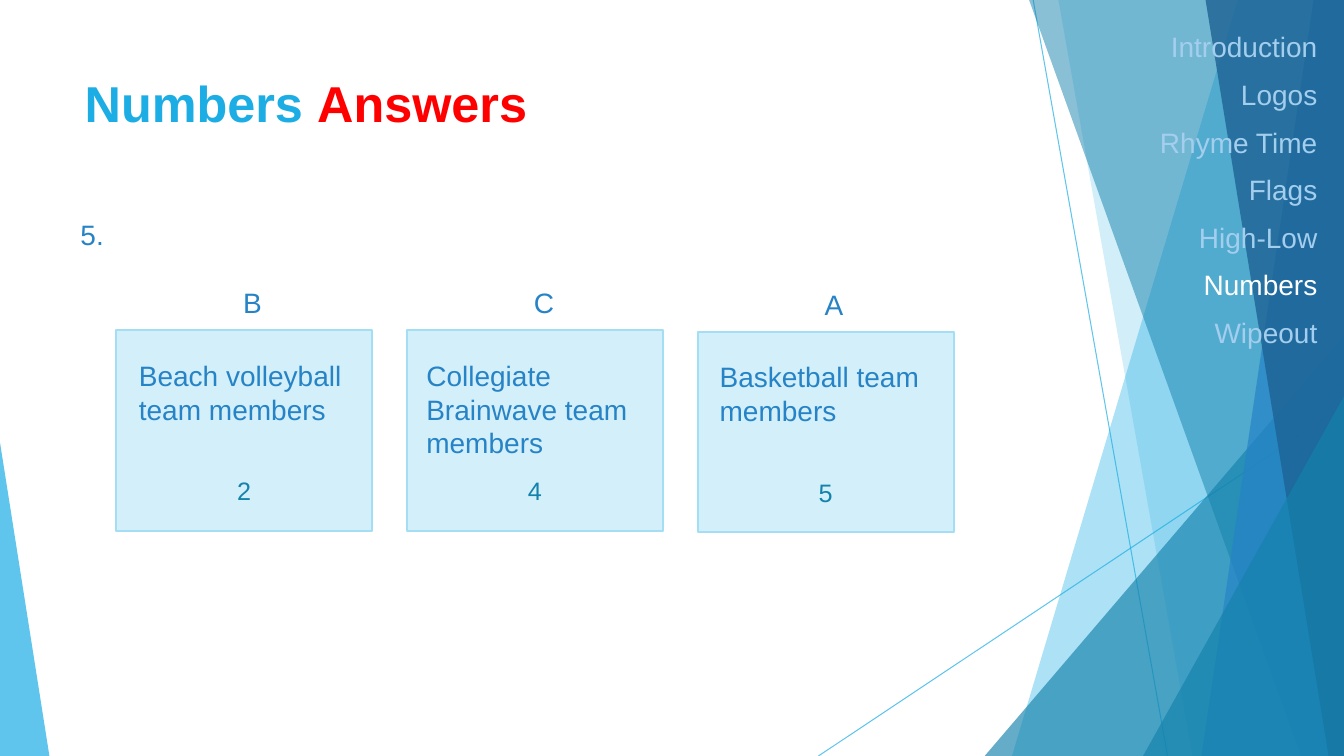
"""Build the "Numbers Answers" quiz slide."""
from pptx import Presentation
from pptx.dml.color import RGBColor
from pptx.enum.shapes import MSO_CONNECTOR, MSO_SHAPE
from pptx.enum.text import MSO_ANCHOR, MSO_AUTO_SIZE, PP_ALIGN
from pptx.oxml.ns import qn
from pptx.util import Pt
from lxml import etree

RECTANGLE, TRIANGLE = MSO_SHAPE.RECTANGLE, MSO_SHAPE.ISOSCELES_TRIANGLE
STRAIGHT = MSO_CONNECTOR.STRAIGHT
LEFT, CENTER, RIGHT = PP_ALIGN.LEFT, PP_ALIGN.CENTER, PP_ALIGN.RIGHT
TOP, BOTTOM = MSO_ANCHOR.TOP, MSO_ANCHOR.BOTTOM
NO_AUTOFIT = MSO_AUTO_SIZE.NONE

SKY = RGBColor(0x1C, 0xAD, 0xE4)
TEAL = RGBColor(0x14, 0x82, 0xAC)
BLUE = RGBColor(0x26, 0x83, 0xC6)
NAVY = RGBColor(0x1D, 0x62, 0x94)
RED = RGBColor(0xFF, 0x00, 0x00)
WHITE = RGBColor(0xFF, 0xFF, 0xFF)
MENU_BLUE = RGBColor(0xA3, 0xCE, 0xED)
CARD_FILL = RGBColor(0xD2, 0xEF, 0xFA)
CARD_LINE = RGBColor(0xA4, 0xDE, 0xF4)

WIDTH, HEIGHT = 960, 540
FONT = "Arial"

TITLE = [("Numbers ", SKY), ("Answers", RED)]
QUESTION = "5."
MENU = ["Introduction", "Logos", "Rhyme Time", "Flags", "High-Low", "Numbers", "Wipeout"]
CURRENT = "Numbers"
# letter, description, answer, top, text inset, text width
CARDS = [
    ("B", "Beach volleyball team members", "2", 236, 9.2, 167),
    ("C", "Collegiate Brainwave team members", "4", 236, 6.8, 173.5),
    ("A", "Basketball team members", "5", 236.9, 8.6, 167),
]
CARD_LEFT, CARD_PITCH, CARD_WIDTH, CARD_HEIGHT = 82.9, 207.7, 183, 143.3

RAYS = [((738, 0), (834, HEIGHT)), ((WIDTH, 290), (584.6, HEIGHT))]
# kind, geometry, colour, opacity
FACETS = [
    ("band", (884.2, 722.9), SKY, 36),
    ("band", (756, 851.8), SKY, 20),
    ("right corner", (703.4, 239.8), TEAL, 66),
    ("band", (735.1, 929.5), TEAL, 50),
    ("band", (938.2, 858.2), BLUE, 70),
    ("band", (861.1, 949), NAVY, 80),
    ("right corner", (816.5, 283), TEAL, 66),
    ("left corner", (35.3, 316.1), SKY, 70),
]


def points(*values):
    return [Pt(value) for value in values]


def set_opacity(shape, percent):
    for color in shape._element.spPr.iter(qn("a:srgbClr")):
        etree.SubElement(color, qn("a:alpha")).set("val", str(percent * 1000))


def write_text(shape, paragraphs, size=20, bold=False, align=LEFT, anchor=TOP, space_before=0):
    frame = shape.text_frame
    frame.word_wrap = True
    frame.auto_size = NO_AUTOFIT
    frame.vertical_anchor = anchor
    for index, runs in enumerate(paragraphs):
        paragraph = frame.paragraphs[0] if index == 0 else frame.add_paragraph()
        paragraph.alignment = align
        paragraph.space_before = Pt(space_before)
        for text, color in runs:
            run = paragraph.add_run()
            run.text = text
            run.font.name = FONT
            run.font.size = Pt(size)
            run.font.bold = bold
            run.font.color.rgb = color


def add_label(slide, box, text, **text_format):
    write_text(slide.shapes.add_textbox(*points(*box)), [[(text, BLUE)]], **text_format)


def add_ray(slide, start, end):
    ray = slide.shapes.add_connector(STRAIGHT, *points(*start, *end))
    ray.line.color.rgb = SKY
    ray.line.width = Pt(0.75)
    set_opacity(ray, 70)
    etree.SubElement(ray._element.spPr, qn("a:effectLst"))


def add_facet(slide, kind, geometry, color, opacity):
    if kind == "band":
        top_x, bottom_x = geometry
        builder = slide.shapes.build_freeform(*points(top_x, 0), scale=1)
        corners = [(WIDTH, 0), (WIDTH, HEIGHT), (bottom_x, HEIGHT)]
        builder.add_line_segments([points(*corner) for corner in corners], close=True)
        facet = builder.convert_to_shape()
    else:
        edge, top = geometry
        on_right = kind == "right corner"
        left, width = (edge, WIDTH - edge) if on_right else (0, edge)
        facet = slide.shapes.add_shape(TRIANGLE, *points(left, top, width, HEIGHT - top))
        facet.adjustments[0] = 1 if on_right else 0
    facet.shadow.inherit = False
    facet.fill.solid()
    facet.fill.fore_color.rgb = color
    facet.line.fill.background()
    set_opacity(facet, opacity)


def add_card(slide, left, letter, description, answer, top, inset, text_width):
    card = slide.shapes.add_shape(RECTANGLE, *points(left, top, CARD_WIDTH, CARD_HEIGHT))
    card.shadow.inherit = False
    card.fill.solid()
    card.fill.fore_color.rgb = CARD_FILL
    card.line.color.rgb = CARD_LINE
    card.line.width = Pt(1.5)
    card.text_frame.margin_bottom = Pt(18)
    write_text(card, [[(answer, TEAL)]], size=18, align=CENTER, anchor=BOTTOM)
    add_label(slide, (left + inset, top + 16.5, text_width, 79), description)
    add_label(slide, (left + 83.7, top - 35.3, 27, 31.5), letter, align=CENTER)


def place(slide, placeholder, box):
    placeholder.left, placeholder.top, placeholder.width, placeholder.height = points(*box)
    slide.shapes._spTree.append(placeholder._element)


def main():
    presentation = Presentation()
    presentation.slide_width, presentation.slide_height = points(WIDTH, HEIGHT)
    slide = presentation.slides.add_slide(presentation.slide_layouts[1])
    title, menu = slide.placeholders

    for start, end in RAYS:
        add_ray(slide, start, end)
    for facet in FACETS:
        add_facet(slide, *facet)

    place(slide, title, (53.3, 48.2, 676.8, 103.7))
    write_text(title, [TITLE], size=36, bold=True)

    add_label(slide, (50.4, 151.9, 32.4, 31.5), QUESTION)
    for index, card in enumerate(CARDS):
        add_card(slide, CARD_LEFT + index * CARD_PITCH, *card)

    place(slide, menu, (760.3, 17.7, 187.9, 325.4))
    entries = [[(name, WHITE if name == CURRENT else MENU_BLUE)] for name in MENU]
    write_text(menu, entries, align=RIGHT, space_before=10)
    for paragraph in menu.text_frame.paragraphs:
        properties = paragraph._p.get_or_add_pPr()
        properties.set("marL", "0")
        properties.set("indent", "0")
        etree.SubElement(properties, qn("a:buNone"))

    presentation.save("out.pptx")


if __name__ == "__main__":
    main()
